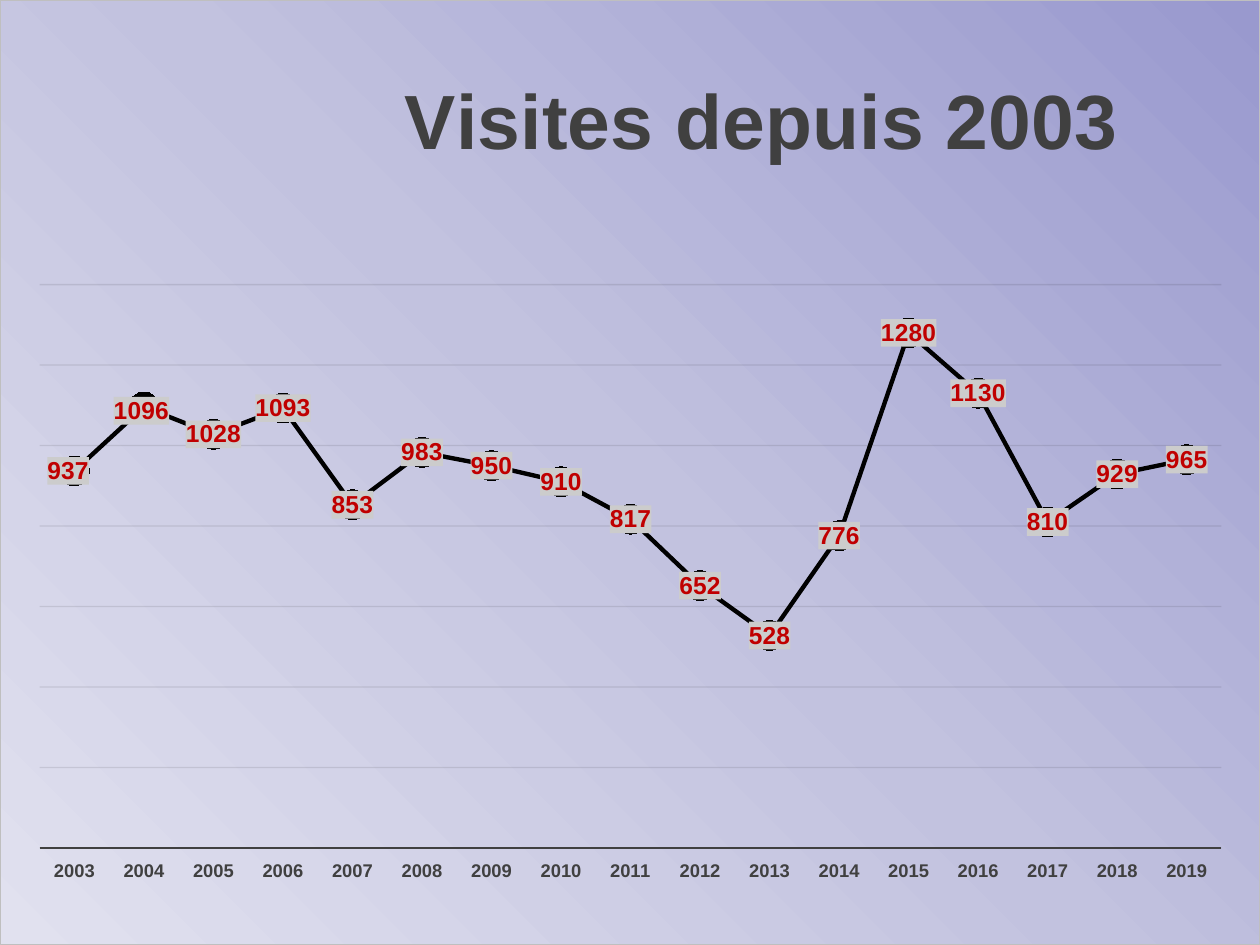
from lxml import etree
from pptx import Presentation
from pptx.chart.data import CategoryChartData
from pptx.dml.color import RGBColor
from pptx.enum.chart import (XL_CHART_TYPE, XL_LABEL_POSITION, XL_MARKER_STYLE,
                             XL_TICK_LABEL_POSITION, XL_TICK_MARK)
from pptx.oxml import parse_xml
from pptx.oxml.ns import nsdecls, qn
from pptx.util import Cm, Pt

BLACK = RGBColor(0x00, 0x00, 0x00)
CHARCOAL = RGBColor(0x40, 0x40, 0x40)
GRID = RGBColor(0x0D, 0x0D, 0x0D)
RED = RGBColor(0xC0, 0x00, 0x00)
LABEL_GREY = RGBColor(0xCC, 0xCC, 0xCC)
BORDER_GREY = RGBColor(0xBF, 0xBF, 0xBF)
GRADIENT = [(0, RGBColor(0x99, 0x99, 0xCE)),
            (50, RGBColor(0xC2, 0xC2, 0xDF)),
            (100, RGBColor(0xE1, 0xE1, 0xEF))]
FONT = "Arial"

FIRST_YEAR = 2003
VISITS = [937, 1096, 1028, 1093, 853, 983, 950, 910, 817,
          652, 528, 776, 1280, 1130, 810, 929, 965]
# Point index -> shift of its label, as fractions of the chart
LABEL_SHIFTS = {0: (-0.005, 0), 1: (-0.002, 0.004)}


def style_font(font, size, color=BLACK, bold=False):
    font.name = FONT
    font.size = Pt(size)
    font.bold = bold
    font.color.rgb = color


def write_text(frame, text, **style):
    frame.text = text
    style_font(frame.paragraphs[0].runs[0].font, **style)


def style_line(line, color, width):
    line.color.rgb = color
    line.width = Pt(width)


def set_layout(parent, index, **parts):
    """Give a chart part a manual layout, as child number index of parent."""
    for old in parent.findall(qn("c:layout")):
        parent.remove(old)
    layout = parse_xml(f"<c:layout {nsdecls('c')}><c:manualLayout/></c:layout>")
    for tag, value in parts.items():
        etree.SubElement(layout[0], qn(f"c:{tag}")).set("val", str(value))
    parent.insert(index, layout)


def shape_properties(fill, line=""):
    return parse_xml(f"<c:spPr {nsdecls('c', 'a')}>{fill}{line}</c:spPr>")


def solid(color):
    return f'<a:solidFill><a:srgbClr val="{color}"/></a:solidFill>'


def style_background(chart):
    stops = "".join(f'<a:gs pos="{percent * 1000}"><a:srgbClr val="{color}"/></a:gs>'
                    for percent, color in GRADIENT)
    fill = (f'<a:gradFill><a:gsLst>{stops}</a:gsLst>'
            f'<a:lin ang="{135 * 60000}" scaled="0"/></a:gradFill>')
    border = f'<a:ln w="{Pt(0.75)}">{solid(BORDER_GREY)}</a:ln>'
    space = chart._chartSpace
    space.find(qn("c:chart")).addnext(shape_properties(fill, border))


def style_title(chart):
    chart.has_title = True
    write_text(chart.chart_title.text_frame, "Visites depuis 2003",
               size=44, color=CHARCOAL, bold=True)
    chart.chart_title.include_in_layout = False
    set_layout(chart.chart_title._element, 1,
               xMode="edge", yMode="edge", x=0.31, y=0.06)


def style_axes(chart):
    years = chart.category_axis
    years.major_tick_mark = years.minor_tick_mark = XL_TICK_MARK.NONE
    years.tick_label_position = XL_TICK_LABEL_POSITION.LOW
    style_font(years.tick_labels.font, size=10.5, color=CHARCOAL, bold=True)
    style_line(years.format.line, CHARCOAL, 1.5)

    visits = chart.value_axis
    visits.visible = False
    visits.minimum_scale, visits.maximum_scale, visits.major_unit = 0, 1400, 200
    visits.has_major_gridlines = True
    gridlines = visits.major_gridlines.format.line
    style_line(gridlines, GRID, 0.75)
    color = visits._element.find(qn("c:majorGridlines")).find(".//" + qn("a:srgbClr"))
    etree.SubElement(color, qn("a:alpha")).set("val", "10000")


def style_labels(labels, element):
    """Format the labels of a series or of one point; element is their XML."""
    style_font(labels.font, size=14, color=RED, bold=True)
    labels.position = XL_LABEL_POSITION.CENTER
    element.find(qn("c:txPr")).addprevious(shape_properties(solid(LABEL_GREY)))


def style_series(series):
    series.smooth = False
    style_line(series.format.line, BLACK, 2.5)
    series.marker.style = XL_MARKER_STYLE.CIRCLE
    series.marker.size = 17
    series.marker.format.fill.solid()
    series.marker.format.fill.fore_color.rgb = BLACK
    style_line(series.marker.format.line, BLACK, 0.75)

    labels = series.data_labels
    labels.show_value = True
    style_labels(labels, labels._element)
    for index, (x, y) in LABEL_SHIFTS.items():
        label = series.points[index].data_label
        label.position = XL_LABEL_POSITION.CENTER
        label.font.bold = True
        element = labels._element.findall(qn("c:dLbl"))[-1]
        style_labels(label, element)
        set_layout(element, 1, x=x, y=y)


def add_visits_chart(slide, left, top, width, height):
    data = CategoryChartData()
    data.categories = [str(FIRST_YEAR + i) for i in range(len(VISITS))]
    data.add_series("Series 1", VISITS)
    chart = slide.shapes.add_chart(XL_CHART_TYPE.LINE_MARKERS,
                                   left, top, width, height, data).chart
    chart.has_legend = False
    style_font(chart.font, size=10)
    chart.plots[0].vary_by_categories = False
    style_background(chart)
    style_title(chart)
    style_axes(chart)
    style_series(chart.plots[0].series[0])
    set_layout(chart._chartSpace.find(".//" + qn("c:plotArea")), 0,
               layoutTarget="inner", xMode="edge", yMode="edge",
               x=0.031, y=0.301, w=0.939, h=0.597)


def main():
    deck = Presentation()
    deck.slide_width, deck.slide_height = Cm(25.4), Cm(19.05)
    slide = deck.slides.add_slide(deck.slide_layouts[6])
    add_visits_chart(slide, Cm(0), Cm(0), deck.slide_width, deck.slide_height)
    deck.save("out.pptx")


if __name__ == "__main__":
    main()
